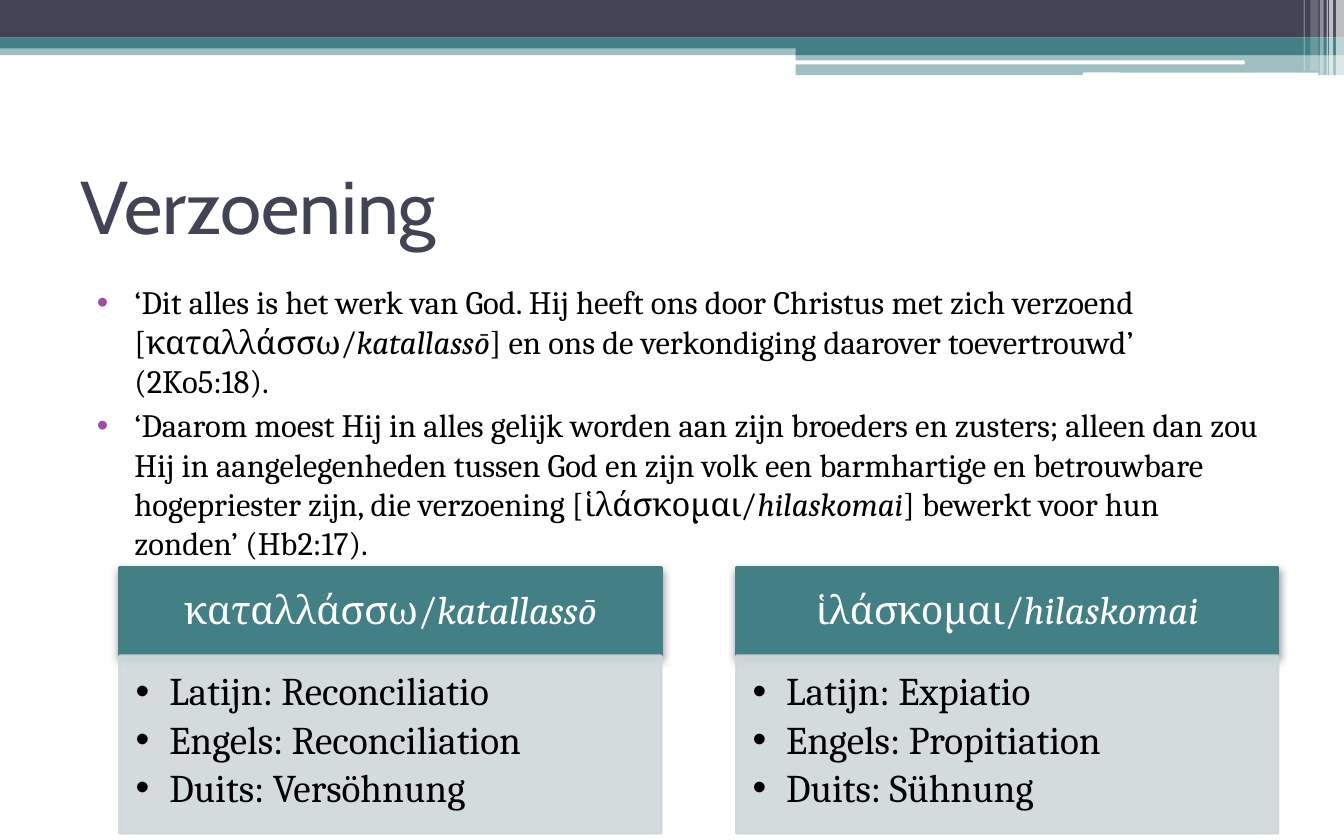
"""Build the Verzoening slide comparing two Greek terms for reconciliation."""
from dataclasses import dataclass
from typing import Optional

from lxml import etree
from pptx import Presentation
from pptx import util as u
from pptx.dml.color import RGBColor
from pptx.enum import shapes, text
from pptx.oxml.ns import qn

COLORS = {
    "slate": "424456",
    "teal": "438086",
    "mist": "CFD8D9",
    "purple": "A04DA3",
    "white": "FFFFFF",
    "black": "000000",
}
HEADING_FONT, BODY_FONT = "Cabin", "Cambria"


@dataclass
class Strip:
    left: float
    top: float
    width: float
    height: float
    color: str
    opacity: int = 100
    rounded: bool = False


@dataclass
class Piece:
    words: str
    italic: bool = False


@dataclass
class Term:
    left: float
    greek: str
    latinized: str
    translations: list[str]


STRIPS = [
    Strip(0, 0.33, 10, 0.08, "teal", 50),
    Strip(0, 0, 10, 0.28, "slate"),
    Strip(0, 0.28, 10, 0.08, "teal"),
    Strip(5.92, 0.33, 4.08, 0.08, "teal"),
    Strip(5.92, 0.4, 4.08, 0.16, "teal", 50),
    Strip(5.91, 0.45, 3.35, 0.03, "white", rounded=True),
    Strip(8.06, 0.54, 1.75, 0.03, "white", rounded=True),
    Strip(9.94, 0, 0.06, 0.57, "white", 65),
    Strip(9.89, 0, 0.03, 0.57, "white", 65),
    Strip(9.87, 0, 0.01, 0.57, "white", 60),
    Strip(9.82, 0, 0.03, 0.57, "white", 40),
    Strip(9.75, 0, 0.06, 0.53, "white", 20),
    Strip(9.7, 0, 0.01, 0.53, "white", 30),
]
QUOTES = [
    [
        Piece("‘Dit alles is het werk van God. Hij heeft ons door Christus met zich "
              "verzoend [καταλλάσσω/"),
        Piece("katallassō", True),
        Piece("] en ons de verkondiging daarover toevertrouwd’ (2Ko5:18)."),
    ],
    [
        Piece("‘Daarom moest Hij in alles gelijk worden aan zijn broeders en zusters; "
              "alleen dan zou Hij in aangelegenheden tussen God en zijn volk een "
              "barmhartige en betrouwbare hogepriester zijn, die verzoening [ἱλάσκομαι/"),
        Piece("hilaskomai", True),
        Piece("] bewerkt voor hun zonden’ (Hb2:17)."),
    ],
]
TERMS = [
    Term(0.89, "καταλλάσσω/", "katallassō",
         ["Latijn: Reconciliatio", "Engels: Reconciliation", "Duits: Versöhnung"]),
    Term(5.48, "ἱλάσκομαι/", "hilaskomai",
         ["Latijn: Expiatio", "Engels: Propitiation", "Duits: Sühnung"]),
]


def rgb(color: str) -> RGBColor:
    return RGBColor.from_string(COLORS[color])


def place(shape, left: float, top: float, width: float, height: float) -> None:
    shape.left, shape.top = u.Inches(left), u.Inches(top)
    shape.width, shape.height = u.Inches(width), u.Inches(height)


def set_opacity(fill_parent, opacity: int) -> None:
    swatch = fill_parent.find(qn("a:solidFill"))[0]
    etree.SubElement(swatch, qn("a:alpha"), val=str(opacity * 1000))


def add_block(slide, strip: Strip, outlined: bool = False):
    kind = shapes.MSO_SHAPE.ROUNDED_RECTANGLE if strip.rounded else shapes.MSO_SHAPE.RECTANGLE
    block = slide.shapes.add_shape(kind, *map(
        u.Inches, (strip.left, strip.top, strip.width, strip.height)))
    block.shadow.inherit = False
    block.fill.solid()
    block.fill.fore_color.rgb = rgb(strip.color)
    if outlined:
        block.line.color.rgb = rgb(strip.color)
        block.line.width = u.Pt(1.5)
    else:
        block.line.fill.background()
    if strip.opacity < 100:
        properties = block.fill._xPr
        set_opacity(properties, strip.opacity)
        if outlined:
            set_opacity(properties.find(qn("a:ln")), strip.opacity)
    return block


def add_drop_shadow(block) -> None:
    effects = block.fill._xPr.find(qn("a:effectLst"))
    shadow = etree.SubElement(effects, qn("a:outerShdw"), blurRad=str(u.Pt(4.1)),
                              dist=str(u.Pt(2)), dir="5400000", rotWithShape="0")
    swatch = etree.SubElement(shadow, qn("a:srgbClr"), val=COLORS["black"])
    etree.SubElement(swatch, qn("a:alpha"), val="40000")


def add_pieces(paragraph, pieces: list[Piece], size: float, color: str,
               font: str = BODY_FONT) -> None:
    for piece in pieces:
        run = paragraph.add_run()
        run.text = piece.words
        run.font.size, run.font.name = u.Pt(size), font
        run.font.italic = piece.italic
        run.font.color.rgb = rgb(color)


def set_bullet(paragraph, margin: float, hanging: float, color: str) -> None:
    properties = paragraph._p.get_or_add_pPr()
    properties.set("marL", str(u.Inches(margin)))
    properties.set("indent", str(u.Inches(-hanging)))
    tint = etree.SubElement(properties, qn("a:buClr"))
    etree.SubElement(tint, qn("a:srgbClr"), val=COLORS[color])
    etree.SubElement(properties, qn("a:buFont"), typeface="Arial")
    etree.SubElement(properties, qn("a:buChar"), char="•")


def set_frame(frame, anchor, insets: Optional[tuple] = None) -> None:
    frame.word_wrap = True
    frame.auto_size = text.MSO_AUTO_SIZE.NONE
    frame.vertical_anchor = anchor
    if insets:
        (frame.margin_left, frame.margin_top,
         frame.margin_right, frame.margin_bottom) = map(u.Inches, insets)


def next_paragraph(frame, index: int):
    return frame.add_paragraph() if index else frame.paragraphs[0]


def add_term(slide, term: Term) -> None:
    header = add_block(slide, Strip(term.left, 4.22, 4.03, 0.66, "teal"), outlined=True)
    add_drop_shadow(header)
    set_frame(header.text_frame, text.MSO_ANCHOR.MIDDLE, (0.16, 0.09, 0.16, 0.09))
    heading = header.text_frame.paragraphs[0]
    heading.alignment = text.PP_ALIGN.CENTER
    heading.line_spacing, heading.space_after = 0.9, u.Pt(7.35)
    add_pieces(heading, [Piece(term.greek), Piece(term.latinized, True)], 21, "white")

    panel = add_block(slide, Strip(term.left, 4.88, 4.03, 1.32, "mist", 90), outlined=True)
    set_frame(panel.text_frame, text.MSO_ANCHOR.TOP, (0.12, 0.12, 0.16, 0.18))
    for index, translation in enumerate(term.translations):
        entry = next_paragraph(panel.text_frame, index)
        entry.alignment = text.PP_ALIGN.LEFT
        entry.line_spacing, entry.space_after = 0.9, u.Pt(3.15)
        set_bullet(entry, 0.25, 0.25, "black")
        add_pieces(entry, [Piece(translation)], 21, "black")


def main() -> None:
    deck = Presentation()
    deck.slide_width, deck.slide_height = u.Inches(10), u.Inches(6.25)
    slide = deck.slides.add_slide(deck.slide_layouts[1])
    for strip in STRIPS:
        add_block(slide, strip)

    title = slide.shapes.title
    place(title, 0.5, 1.04, 9, 0.97)
    set_frame(title.text_frame, text.MSO_ANCHOR.MIDDLE)
    title.text_frame.paragraphs[0].alignment = text.PP_ALIGN.LEFT
    add_pieces(title.text_frame.paragraphs[0], [Piece("Verzoening")], 40, "slate", HEADING_FONT)

    quotes = slide.placeholders[1]
    place(quotes, 0.5, 2.05, 9, 2.18)
    set_frame(quotes.text_frame, text.MSO_ANCHOR.TOP)
    for index, pieces in enumerate(QUOTES):
        quote = next_paragraph(quotes.text_frame, index)
        quote.line_spacing, quote.space_before = 1.0, u.Pt(3)
        set_bullet(quote, 0.4, 0.28, "purple")
        add_pieces(quote, pieces, 17.5, "black")

    for term in TERMS:
        add_term(slide, term)
    deck.save("out.pptx")


if __name__ == "__main__":
    main()
